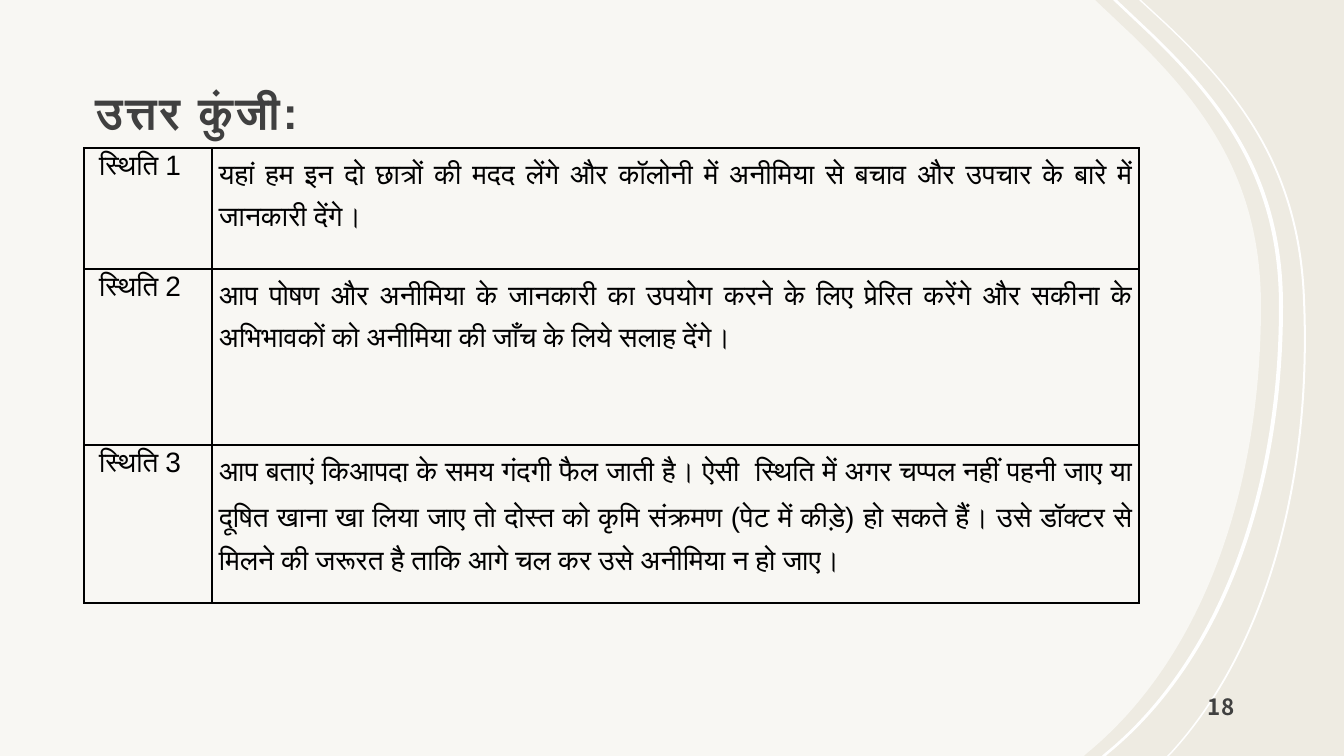
import pptx
import pptx.dml.color
import pptx.enum.text
import pptx.oxml
import pptx.oxml.ns
import pptx.util
from lxml import etree

TITLE = "उत्तर कुंजी:"
PAGE_NUMBER = "18"
ANSWERS = [
    ("स्थिति 1", "यहां हम इन दो छात्रों की मदद लेंगे और कॉलोनी में अनीमिया से बचाव और उपचार के बारे में जानकारी देंगे।"),
    ("स्थिति 2", "आप पोषण और अनीमिया के जानकारी का उपयोग करने के लिए प्रेरित करेंगे और सकीना के अभिभावकों को अनीमिया की जाँच के लिये सलाह देंगे।"),
    ("स्थिति 3", "आप बताएं किआपदा के समय गंदगी फैल जाती है। ऐसी  स्थिति में अगर चप्पल नहीं पहनी जाए या दूषित खाना खा लिया जाए तो दोस्त को कृमि संक्रमण (पेट में कीड़े) हो सकते हैं। उसे डॉक्टर से मिलने की जरूरत है ताकि आगे चल कर उसे अनीमिया न हो जाए।"),
]
COLUMN_WIDTHS = [128, 927]
ROW_HEIGHTS = [121, 176, 158]
TABLE_LEFT, TABLE_TOP = 84, 148
PAGE_WIDTH, PAGE_HEIGHT = 1344, 756
BACKGROUND, WHITE, BLACK, GREY = "EEEBE2", "FFFFFF", "000000", "404040"
PANEL_OFFSET = -18

INNER_ARC = [(1113, 0), (1150, 35), (1222, 105), (1279, 180), (1279, 306),
             (1279, 496), (1217, 662), (1104, 754), (1102, 756)]
OUTER_ARC = [(1139, 0), (1165, 24), (1239, 94), (1298, 169), (1303, 299),
             (1311, 484), (1264, 650), (1170, 753), (1167, 756)]


def px(length):
    return pptx.util.Emu(round(length * 914400 / 100.8))


def color(value):
    return pptx.dml.color.RGBColor.from_string(value)


def add_xml(parent, tag, **attributes):
    element = etree.SubElement(parent, pptx.oxml.ns.qn(tag))
    for name, value in attributes.items():
        element.set(name, str(value))
    return element


def write(frame, text, size=20, font="Arial", ink=BLACK, bold=False, align=None,
          spacing=None, after=None, indent=0, tracking=0):
    para = frame.paragraphs[0]
    para.alignment = align
    para.line_spacing = spacing
    if after is not None:
        para.space_after = pptx.util.Pt(after)
    if indent:
        para._p.get_or_add_pPr().set("indent", str(px(indent)))
    span = para.add_run()
    span.text = text
    span.font.size = pptx.util.Pt(size)
    span.font.name = font
    span.font.bold = bold
    span.font.color.rgb = color(ink)
    if tracking:
        span._r.get_or_add_rPr().set("spc", str(tracking))


def add_text_box(page, text, left, top, width, height, **style):
    box = page.shapes.add_textbox(px(left), px(top), px(width), px(height))
    frame = box.text_frame
    frame.word_wrap = True
    frame.vertical_anchor = pptx.enum.text.MSO_ANCHOR.BOTTOM
    frame.margin_left = frame.margin_right = frame.margin_top = px(12)
    frame.margin_bottom = px(10)
    write(frame, text, **style)


def shift(arc, offset):
    return [(x + offset, y) for x, y in arc]


def follow(arc):
    return [arc[1:2], arc[2:5], arc[5:8], arc[8:9]]


def add_outline(page, start, segments, alpha=100):
    anchors = [(px(x), px(y)) for x, y in [start] + [segment[-1] for segment in segments]]
    builder = page.shapes.build_freeform(*anchors[0], scale=1.0)
    builder.add_line_segments(anchors[1:], close=True)
    shape = builder.convert_to_shape()
    lines = shape._element.spPr.findall(".//" + pptx.oxml.ns.qn("a:lnTo"))
    for line, segment in zip(lines, segments):
        if len(segment) == 3:
            curve = etree.Element(pptx.oxml.ns.qn("a:cubicBezTo"))
            for x, y in segment:
                add_xml(curve, "a:pt", x=px(x) - shape.left, y=px(y) - shape.top)
            line.getparent().replace(line, curve)
    shape.shadow.inherit = False
    shape.line.fill.background()
    shape.fill.solid()
    shape.fill.fore_color.rgb = color(WHITE)
    if alpha < 100:
        tint = shape._element.spPr.find(".//" + pptx.oxml.ns.qn("a:srgbClr"))
        add_xml(tint, "a:alpha", val=alpha * 1000)


def add_panel(page):
    edge = shift(INNER_ARC, PANEL_OFFSET)
    corners = [[(0, PAGE_HEIGHT)], [(0, 0)]]
    add_outline(page, edge[0], follow(edge) + corners, alpha=60)


def add_stripe(page, arc, width):
    back = shift(arc, width)[::-1]
    add_outline(page, arc[0], follow(arc) + [back[:1]] + follow(back))


def format_cell(cell):
    cell.margin_left = cell.margin_right = px(7)
    cell.margin_top = cell.margin_bottom = 0
    properties = cell._tc.get_or_add_tcPr()
    for side in ("a:lnL", "a:lnR", "a:lnT", "a:lnB"):
        line = add_xml(properties, side, w=pptx.util.Pt(1))
        add_xml(add_xml(line, "a:solidFill"), "a:srgbClr", val=BLACK)
    cell.fill.background()


def add_answers(page):
    table = page.shapes.add_table(
        len(ANSWERS), len(COLUMN_WIDTHS), px(TABLE_LEFT), px(TABLE_TOP),
        px(sum(COLUMN_WIDTHS)), px(sum(ROW_HEIGHTS))).table
    table.first_row = table.horz_banding = False
    for column, width in zip(table.columns, COLUMN_WIDTHS):
        column.width = px(width)
    justify = pptx.enum.text.PP_ALIGN.JUSTIFY
    for row, height, (label, answer) in zip(table.rows, ROW_HEIGHTS, ANSWERS):
        row.height = px(height)
        label_cell, answer_cell = row.cells
        format_cell(label_cell)
        format_cell(answer_cell)
        write(label_cell.text_frame, label, align=justify, spacing=1.06, indent=8)
        write(answer_cell.text_frame, answer, align=justify, spacing=1.5)


def main():
    deck = pptx.Presentation()
    deck.slide_width, deck.slide_height = px(PAGE_WIDTH), px(PAGE_HEIGHT)
    page = deck.slides.add_slide(deck.slide_layouts[6])
    page.background.fill.solid()
    page.background.fill.fore_color.rgb = color(BACKGROUND)
    add_panel(page)
    add_text_box(page, TITLE, 84, 0, 862, 148, size=32, ink=GREY, bold=True,
                 spacing=1.3, tracking=150)
    add_stripe(page, OUTER_ARC, 2)
    add_stripe(page, INNER_ARC, 4)
    add_text_box(page, PAGE_NUMBER, 1196, 680, 131, 50, size=16,
                 font="Noto Sans CJK JP", ink=GREY, bold=True, after=6)
    add_answers(page)
    deck.save("out.pptx")


if __name__ == "__main__":
    main()
